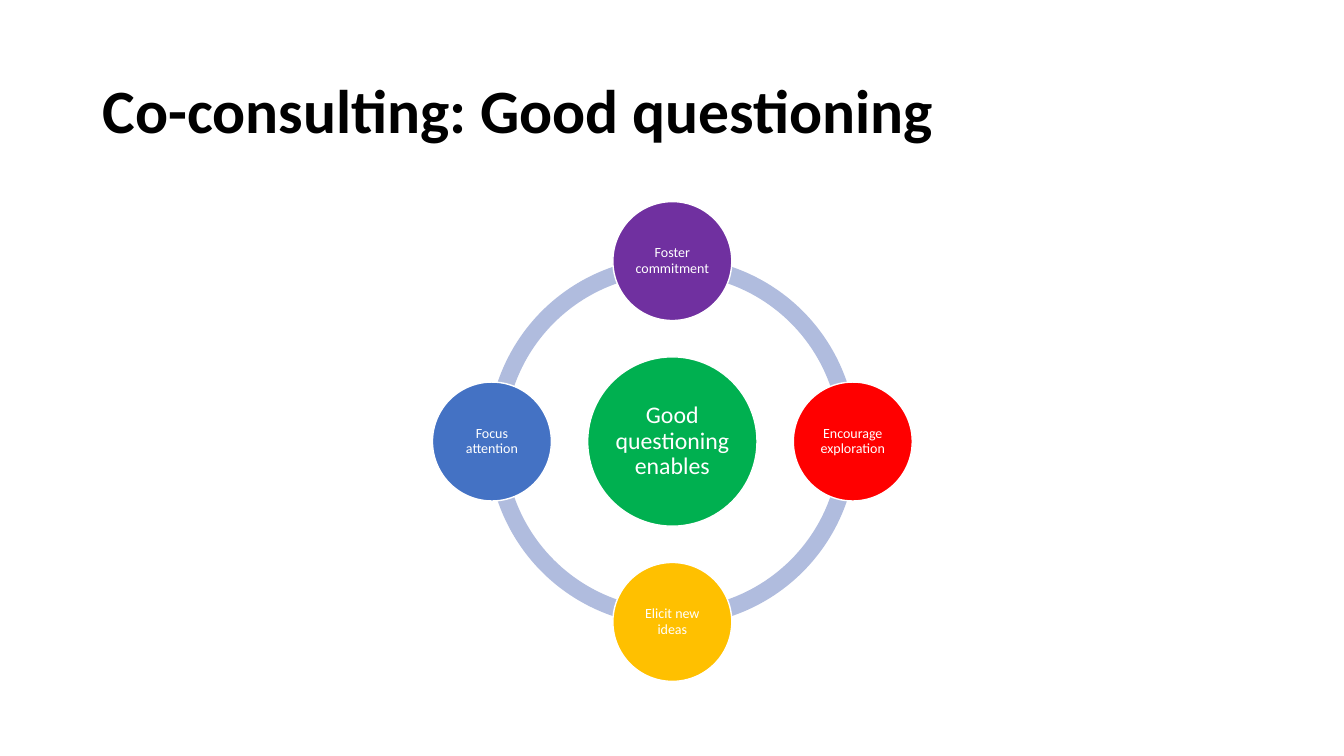
from dataclasses import dataclass
from math import cos, pi, sin

from pptx import Presentation
from pptx.dml.color import RGBColor as Rgb
from pptx.enum.shapes import MSO_SHAPE as Kind
from pptx.enum.text import MSO_ANCHOR as Anchor, PP_ALIGN as Align
from pptx.util import Inches, Pt


@dataclass(frozen=True)
class Theme:
    font: str = "Calibri"
    ink: str = "000000"
    paper: str = "FFFFFF"
    ring: str = "B0BCDE"
    hub: str = "00B050"
    title: float = 44
    core: float = 17
    small: float = 10


THEME = Theme()
CELL = 0.1
COLS, ROWS = 133.33, 75
MID = (66.7, 43.8)
ORBIT = 17.9
RING = 36.6
HUB = 16.8
NODE = 11.8
BAND = 0.046
TURN = 216
NODES = [
    ("Foster commitment", "7030A0"),
    ("Encourage exploration", "FF0000"),
    ("Elicit new ideas", "FFC000"),
    ("Focus attention", "4472C4"),
]


def grid(*cells):
    return [Inches(cell * CELL) for cell in cells]


def write(shape, text, size, color, align, inset, bold=False):
    frame = shape.text_frame
    frame.word_wrap = True
    frame.vertical_anchor = Anchor.MIDDLE
    frame.margin_left = frame.margin_right = Inches(inset)
    frame.margin_top = frame.margin_bottom = Inches(inset)
    para = frame.paragraphs[0]
    para.alignment = align
    para.line_spacing = 0.9
    run = para.add_run()
    run.text = text
    run.font.name = THEME.font
    run.font.size = Pt(size)
    run.font.bold = bold
    run.font.color.rgb = Rgb.from_string(color)


def add_round(slide, kind, mid, size, color):
    left, top = (axis - size / 2 for axis in mid)
    shape = slide.shapes.add_shape(kind, *grid(left, top, size, size))
    shape.shadow.inherit = False
    shape.fill.solid()
    shape.fill.fore_color.rgb = Rgb.from_string(color)
    return shape


def add_arc(slide, start, end):
    arc = add_round(slide, Kind.BLOCK_ARC, MID, RING, THEME.ring)
    arc.line.fill.background()
    for spot, value in enumerate((start, end, BAND)):
        arc.adjustments[spot] = value


def add_disc(slide, mid, size, color, text, points, inset):
    disc = add_round(slide, Kind.OVAL, mid, size, color)
    disc.line.color.rgb = Rgb.from_string(THEME.paper)
    disc.line.width = Pt(1)
    write(disc, text, points, THEME.paper, Align.CENTER, inset)


def add_title(slide, text):
    box = slide.shapes.add_textbox(*grid(9.2, 4, 115, 14.5))
    write(box, text, THEME.title, THEME.ink, Align.LEFT, 0.1, True)


def main():
    deck = Presentation()
    deck.slide_width, deck.slide_height = grid(COLS, ROWS)
    slide = deck.slides.add_slide(deck.slide_layouts[6])
    add_title(slide, "Co-consulting: Good questioning")
    count = len(NODES)
    step = TURN / count
    for spot in range(count):
        add_arc(slide, spot * step, (spot + 1) * step % TURN)
    add_disc(slide, MID, HUB, THEME.hub, "Good questioning enables", THEME.core, 0.02)
    for spot, (text, color) in enumerate(NODES):
        angle = 2 * pi * spot / count
        mid = (MID[0] + ORBIT * sin(angle), MID[1] - ORBIT * cos(angle))
        add_disc(slide, mid, NODE, color, text, THEME.small, 0.01)
    deck.save("out.pptx")


if __name__ == "__main__":
    main()
